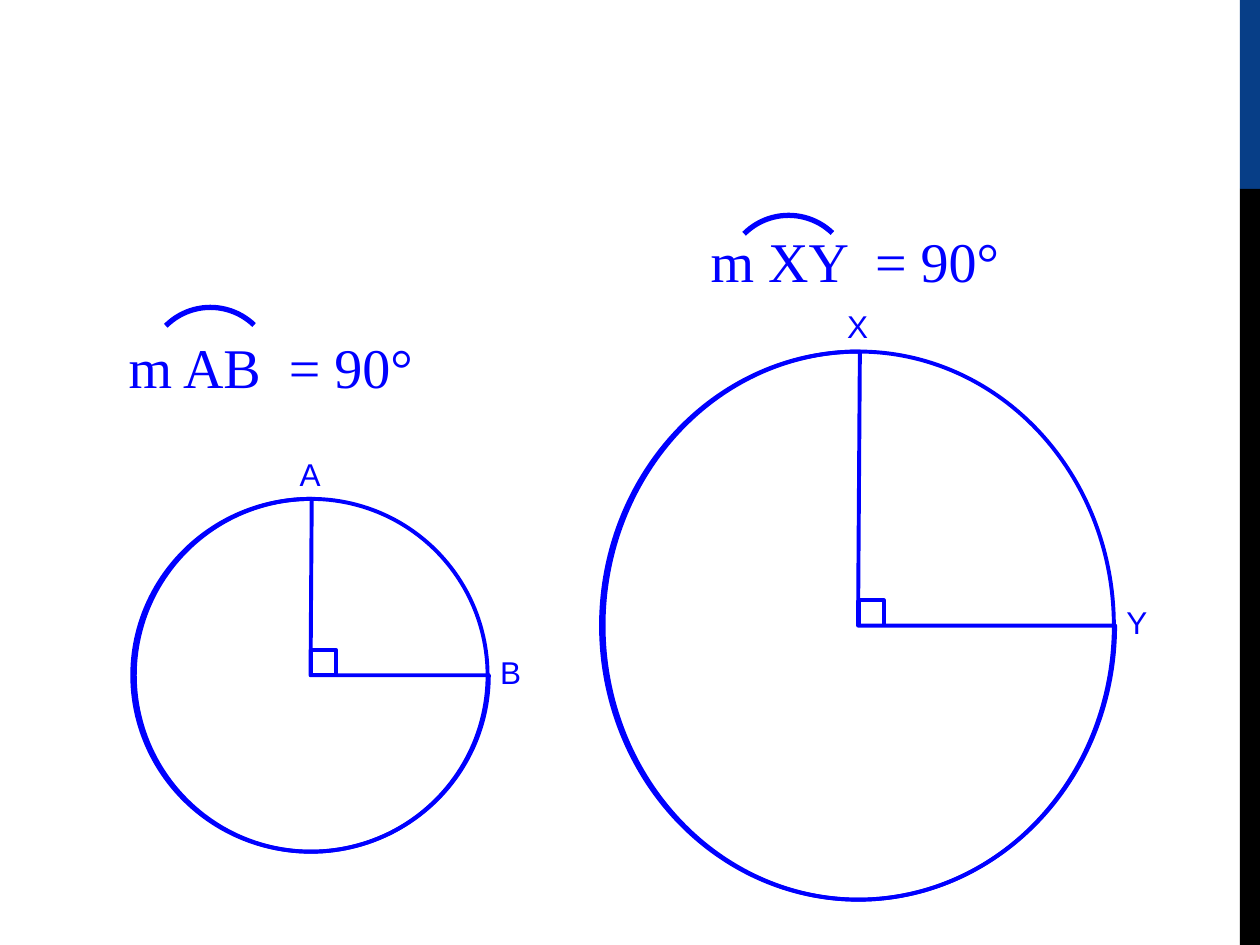
from pptx import Presentation
from pptx.dml.color import RGBColor
from pptx.enum.shapes import MSO_SHAPE
from pptx.util import Inches, Pt

BLUE = RGBColor(0x00, 0x00, 0xFF)
NAVY = RGBColor(0x07, 0x3E, 0x87)
BLACK = RGBColor(0x00, 0x00, 0x00)

WIDE, HIGH = 10, 7.5
BAR = 0.16
SPLIT = HIGH / 5
SQUARE = 0.2
LABEL = (0.58, 0.4)
EQUAL = (4.25, 0.63)
INDENT = 0.43

CIRCLES = [
    {"box": (1.07, 3.96, 2.8, 2.8), "ends": ("A", "B"),
     "text": "m AB  = 90°", "at": (0.59, 2.59), "arc": (1.67, 2.94)},
    {"box": (4.79, 2.79, 4.05, 4.35), "ends": ("X", "Y"),
     "text": "m XY  = 90°", "at": (5.21, 1.75), "arc": (6.26, 2.21)},
]

deck = Presentation()
deck.slide_width, deck.slide_height = Inches(WIDE), Inches(HIGH)
slide = deck.slides.add_slide(deck.slide_layouts[6])


def draw(kind, box, fill=None, width=2.25):
    shape = slide.shapes.add_shape(kind, *map(Inches, box))
    shape.shadow.inherit = False
    if fill is None:
        shape.fill.background()
        shape.line.color.rgb = BLUE
        shape.line.width = Pt(width)
    else:
        shape.fill.solid()
        shape.fill.fore_color.rgb = fill
        shape.line.fill.background()
    return shape


def write(text, box, font, size, indent=0.1):
    frame = slide.shapes.add_textbox(*map(Inches, box)).text_frame
    frame.word_wrap = True
    frame.margin_left = Inches(indent)
    frame.text = text
    style = frame.paragraphs[0].runs[0].font
    style.name, style.size = font, Pt(size)
    style.color.rgb = BLUE


def build(item):
    left, top, width, height = item["box"]
    midx, midy = left + width / 2, top + height / 2
    draw(MSO_SHAPE.OVAL, item["box"])
    pie = draw(MSO_SHAPE.PIE, (left - 0.02, top, width + 0.03, height))
    pie.adjustments[0], pie.adjustments[1] = 0, 162.23
    draw(MSO_SHAPE.RECTANGLE, (midx, midy - SQUARE, SQUARE, SQUARE))

    first, second = item["ends"]
    write(first, (midx - 0.19, top - 0.4, *LABEL), "Arial", 18)
    write(second, (left + width, midy - 0.23, *LABEL), "Arial", 18)
    write(item["text"], (*item["at"], *EQUAL), "Times New Roman", 32, INDENT)

    arcx, arcy = item["arc"]
    arc = draw(MSO_SHAPE.ARC, (arcx - 0.5, arcy - 0.5, 1, 1), width=3)
    arc.adjustments[0], arc.adjustments[1] = 135, 188.4


draw(MSO_SHAPE.RECTANGLE, (WIDE - BAR, 0, BAR, SPLIT), NAVY)
draw(MSO_SHAPE.RECTANGLE, (WIDE - BAR, SPLIT, BAR, HIGH - SPLIT), BLACK)
for item in CIRCLES:
    build(item)

deck.save("out.pptx")
